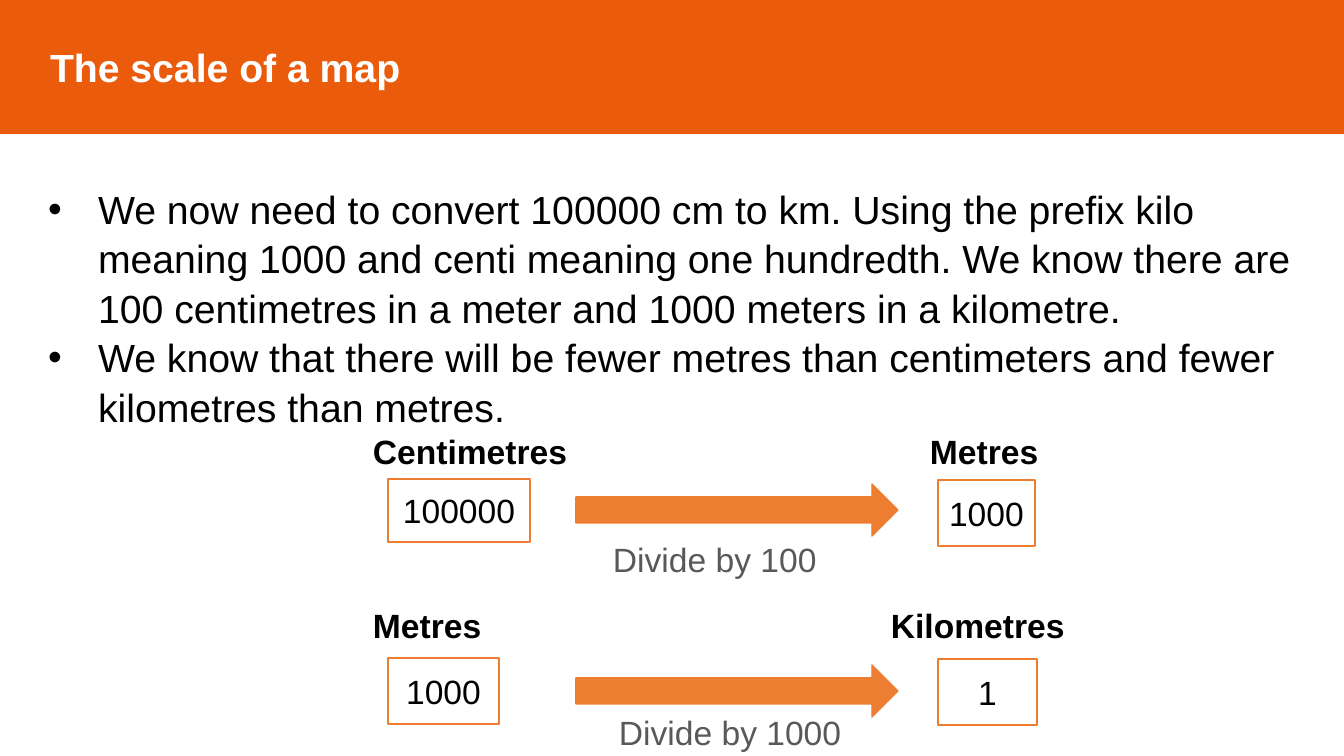
from lxml import etree
from pptx import Presentation
from pptx.dml.color import RGBColor
from pptx.enum.shapes import MSO_SHAPE as Shape
from pptx.enum.text import MSO_ANCHOR as Anchor, MSO_AUTO_SIZE as AutoSize, PP_ALIGN as Align
from pptx.oxml.ns import qn
from pptx.util import Emu, Pt

BAR_ORANGE = RGBColor(0xEA, 0x5B, 0x0C)
ACCENT_ORANGE = RGBColor(0xED, 0x7D, 0x31)
WHITE = RGBColor(0xFF, 0xFF, 0xFF)
BLACK = RGBColor(0x00, 0x00, 0x00)
GREY = RGBColor(0x59, 0x59, 0x59)

PX_PER_INCH = 100.8


def px(length):
    return Emu(round(length * 914400 / PX_PER_INCH))


class SlideBuilder:
    font = "Arial"
    heading_size = 28
    label_size = 24

    def __init__(self, presentation):
        self.slide = presentation.slides.add_slide(presentation.slide_layouts[1])

    def place(self, shape, left, top, width, height):
        shape.left, shape.top = px(left), px(top)
        shape.width, shape.height = px(width), px(height)

    def paint(self, shape, fill, line):
        shape.fill.solid()
        shape.fill.fore_color.rgb = fill
        shape.line.color.rgb = line
        shape.line.width = Pt(1)

    def add_text(self, paragraph, text, size, color, bold=False):
        run = paragraph.add_run()
        run.text = text
        run.font.name = self.font
        run.font.size = Pt(size)
        run.font.color.rgb = color
        run.font.bold = bold

    def title(self, text, *box):
        shape = self.slide.shapes.title
        self.place(shape, *box)
        self.paint(shape, BAR_ORANGE, BAR_ORANGE)
        frame = shape.text_frame
        frame.auto_size = AutoSize.NONE
        frame.vertical_anchor = Anchor.MIDDLE
        frame.margin_left = px(50)
        paragraph = frame.paragraphs[0]
        paragraph.alignment = Align.LEFT
        self.add_text(paragraph, text, self.heading_size, WHITE, True)

    def bullets(self, items, *box):
        shape = self.slide.placeholders[1]
        self.place(shape, *box)
        frame = shape.text_frame
        frame.auto_size = AutoSize.NONE
        for index, item in enumerate(items):
            paragraph = frame.add_paragraph() if index else frame.paragraphs[0]
            paragraph.space_before = Pt(0)
            paragraph.line_spacing = 1.05
            self.add_text(paragraph, item, self.heading_size, BLACK)
            properties = paragraph._p.get_or_add_pPr()
            properties.set("marL", str(px(50)))
            properties.set("indent", str(-px(50)))
            etree.SubElement(properties, qn("a:buFont"), typeface=self.font)
            etree.SubElement(properties, qn("a:buChar"), char="•")

    def label(self, text, left, top, width, color=BLACK, bold=False):
        shape = self.slide.shapes.add_textbox(px(left), px(top), px(width), px(50))
        shape.text_frame.word_wrap = True
        self.add_text(shape.text_frame.paragraphs[0], text, self.label_size, color, bold)

    def shape(self, kind, box, fill):
        shape = self.slide.shapes.add_shape(kind, *map(px, box))
        shape.shadow.inherit = False
        self.paint(shape, fill, ACCENT_ORANGE)
        return shape

    def value_box(self, text, *box):
        frame = self.shape(Shape.RECTANGLE, box, WHITE).text_frame
        frame.word_wrap = True
        frame.vertical_anchor = Anchor.MIDDLE
        paragraph = frame.paragraphs[0]
        paragraph.alignment = Align.CENTER
        self.add_text(paragraph, text, self.label_size, BLACK)

    def arrow(self, *box):
        self.shape(Shape.RIGHT_ARROW, box, ACCENT_ORANGE)


def main():
    presentation = Presentation()
    presentation.slide_width, presentation.slide_height = px(1344), px(756)
    builder = SlideBuilder(presentation)

    # Heading and explanation
    builder.title("The scale of a map", 0, 0, 1344, 133)
    builder.bullets([
        "We now need to convert 100000 cm to km. Using the prefix kilo meaning 1000 "
        "and centi meaning one hundredth. We know there are 100 centimetres in a meter "
        "and 1000 meters in a kilometre.",
        "We know that there will be fewer metres than centimeters and fewer "
        "kilometres than metres.",
    ], 38, 178, 1268, 248)

    # Conversions: (unit, top), (value, top, width, height) on each side, arrow, rule
    conversions = [
        (426, ("Centimetres", 363), ("Metres", 920),
         ("100000", 479, 142, 63), ("1000", 480, 97, 66),
         484, ("Divide by 100", 603, 534)),
        (600, ("Metres", 363), ("Kilometres", 881),
         ("1000", 658, 111, 66), ("1", 659, 99, 66),
         665, ("Divide by 1000", 609, 707)),
    ]
    for unit_top, *units, source, result, arrow_top, (rule, rule_left, rule_top) in conversions:
        for unit, left in units:
            builder.label(unit, left, unit_top, 230, bold=True)
        for left, (value, *box) in zip((388, 938), (source, result)):
            builder.value_box(value, left, *box)
        builder.arrow(576, arrow_top, 322, 52)
        builder.label(rule, rule_left, rule_top, 255, GREY)

    presentation.save("out.pptx")


if __name__ == "__main__":
    main()
